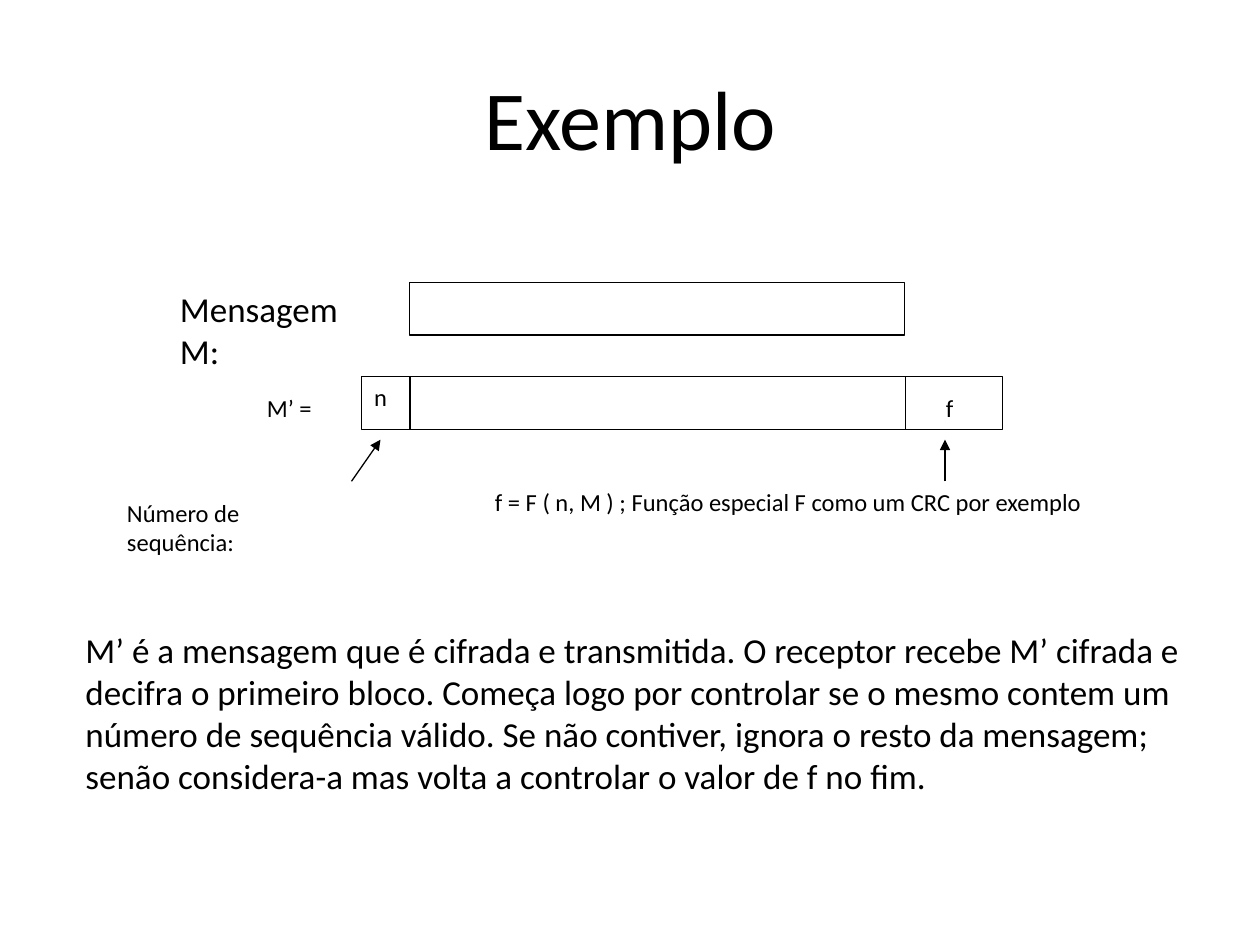
from dataclasses import dataclass

from lxml.etree import SubElement
from pptx import Presentation
from pptx.dml.color import RGBColor
from pptx.enum.shapes import MSO_CONNECTOR, MSO_SHAPE
from pptx.enum.text import MSO_ANCHOR, PP_ALIGN
from pptx.oxml.ns import qn
from pptx.util import Inches, Pt


@dataclass(frozen=True)
class Theme:
    font: str = "Calibri"
    ink: RGBColor = RGBColor(0, 0, 0)
    paper: RGBColor = RGBColor(255, 255, 255)
    title: int = 48
    body: int = 20
    label: int = 14
    stroke: float = 0.75


class SlideBuilder:
    """Draws on a grid of 100 columns by 75 rows."""

    COLUMNS, ROWS = 100, 75

    def __init__(self, deck, theme):
        self.theme = theme
        self.column = deck.slide_width / self.COLUMNS
        self.row = deck.slide_height / self.ROWS
        self.slide = deck.slides.add_slide(deck.slide_layouts[5])
        background = self.slide.background.fill
        background.solid()
        background.fore_color.rgb = theme.paper

    def place(self, x, y):
        return round(x * self.column), round(y * self.row)

    def set_text(self, frame, text, size, align=PP_ALIGN.LEFT):
        frame.word_wrap = True
        frame.text = text
        for paragraph in frame.paragraphs:
            paragraph.alignment = align
            for run in paragraph.runs:
                run.font.name = self.theme.font
                run.font.size = Pt(size)
                run.font.color.rgb = self.theme.ink

    def title(self, text, x, y, width, height):
        heading = self.slide.shapes.title
        heading.left, heading.top = self.place(x, y)
        heading.width, heading.height = self.place(width, height)
        heading.text_frame.vertical_anchor = MSO_ANCHOR.MIDDLE
        self.set_text(heading.text_frame, text, self.theme.title, PP_ALIGN.CENTER)

    def text(self, text, x, y, width, height, size):
        box = self.slide.shapes.add_textbox(*self.place(x, y), *self.place(width, height))
        self.set_text(box.text_frame, text, size)

    def block(self, x, y, width, height):
        field = self.slide.shapes.add_shape(
            MSO_SHAPE.RECTANGLE, *self.place(x, y), *self.place(width, height))
        field.shadow.inherit = False
        field.fill.background()
        self.stroke(field.line)

    def arrow(self, start, end):
        pointer = self.slide.shapes.add_connector(
            MSO_CONNECTOR.STRAIGHT, *self.place(*start), *self.place(*end))
        self.stroke(pointer.line)
        properties = pointer._element.spPr
        SubElement(properties.get_or_add_ln(), qn("a:tailEnd"), type="triangle")
        SubElement(properties, qn("a:effectLst"))

    def stroke(self, line):
        line.color.rgb = self.theme.ink
        line.width = Pt(self.theme.stroke)


def main():
    deck = Presentation()
    deck.slide_width, deck.slide_height = Inches(10), Inches(7.5)
    theme = Theme()
    page = SlideBuilder(deck, theme)
    page.title("Exemplo", 5, 3, 90, 12.5)

    # Plain message M
    message_x, message_width, field_height = 32.5, 39.3, 4.2
    page.text("Mensagem M:", 13.3, 22.3, 17.6, 4.4, theme.body)
    page.block(message_x, 22.4, message_width, field_height)

    # Extended message M’: sequence number, message, check value
    field_x = 28.7
    for field_width in (3.85, message_width, 7.7):
        page.block(field_x, 29.9, field_width, field_height)
        field_x += field_width

    # Labels of the fields and their meaning
    label_height = 3.4
    for label, x, y, width in (
        ("M’ =", 20.2, 30.7, 6.3),
        ("n", 28.7, 29.8, 2.9),
        ("f", 74.1, 30.7, 2.7),
        ("Número de sequência:", 9.1, 39, 19.3),
        ("f = F ( n, M ) ; Função especial F como um CRC por exemplo", 38.3, 38.2, 49),
    ):
        page.text(label, x, y, width, label_height, theme.label)

    # Arrows from the meanings up to the fields
    for tail_x, head_x in ((27.9, 30.2), (75, 75)):
        page.arrow((tail_x, 38.2), (head_x, 34.9))

    # Explanation
    page.text(
        "M’ é a mensagem que é cifrada e transmitida. O receptor recebe M’ cifrada e "
        "decifra o primeiro bloco. Começa logo por controlar se o mesmo contem um "
        "número de sequência válido. Se não contiver, ignora o resto da mensagem; "
        "senão considera-a mas volta a controlar o valor de f no fim.",
        5.8, 49.4, 89.2, 14.5, theme.body)

    deck.save("out.pptx")


if __name__ == "__main__":
    main()
